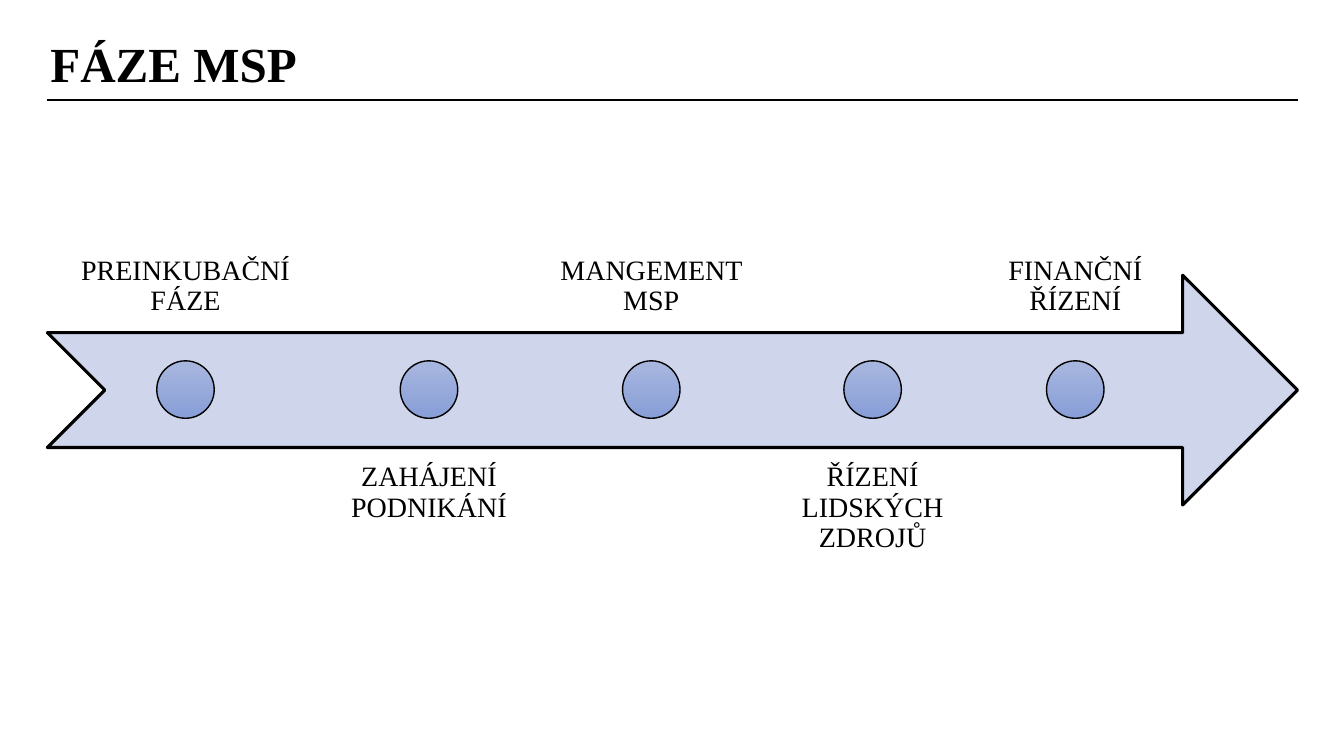
import pptx
import pptx.util
import pptx.dml.color
import pptx.enum.shapes
import pptx.enum.text
import pptx.oxml.ns
import lxml.etree

Inches = pptx.util.Inches
Pt = pptx.util.Pt
SHAPE = pptx.enum.shapes.MSO_SHAPE
ALIGN = pptx.enum.text.PP_ALIGN
ANCHOR = pptx.enum.text.MSO_ANCHOR

BLACK = "000000"
ARROW_FILL = "CFD5EA"
DOT_TOP, DOT_BOTTOM = "A8B7DF", "889ED7"
DOT_SIZE = 0.57
LABEL_HEIGHT = 2.28
PHASES = [
    ("PREINKUBAČNÍ FÁZE", 0.48, 2.72),
    ("ZAHÁJENÍ PODNIKÁNÍ", 3.3, 1.91),
    ("MANGEMENT MSP", 5.31, 2.3),
    ("ŘÍZENÍ LIDSKÝCH ZDROJŮ", 7.7, 1.91),
    ("FINANČNÍ ŘÍZENÍ", 9.71, 1.91),
]


def rgb(value):
    return pptx.dml.color.RGBColor.from_string(value)


def place(sp, left, top, width, height):
    sp.left, sp.top = Inches(left), Inches(top)
    sp.width, sp.height = Inches(width), Inches(height)


def write(tf, text, size=20, bold=False, align=ALIGN.CENTER, anchor=ANCHOR.TOP,
          spacing=0.9, inset=(0.16, 0.16)):
    tf.word_wrap = True
    tf.auto_size = pptx.enum.text.MSO_AUTO_SIZE.NONE
    tf.vertical_anchor = anchor
    tf.margin_left = tf.margin_right = Inches(inset[0])
    tf.margin_top = tf.margin_bottom = Inches(inset[1])
    p = tf.paragraphs[0]
    p.alignment = align
    p.line_spacing = spacing
    r = p.add_run()
    r.text = text
    r.font.name = "Times New Roman"
    r.font.size = Pt(size)
    r.font.bold = bold
    r.font.color.rgb = rgb(BLACK)


def add_title(s, text):
    sp = s.shapes.title
    place(sp, 0.4, 0.28, 12.47, 0.69)
    write(sp.text_frame, text, size=35, bold=True, align=ALIGN.LEFT,
          spacing=1.0, inset=(0.1, 0.05))


def add_rule(s, left, right, y):
    line = s.shapes.add_connector(
        pptx.enum.shapes.MSO_CONNECTOR.STRAIGHT,
        Inches(left), Inches(y), Inches(right), Inches(y))
    line.line.color.rgb = rgb(BLACK)
    line.line.width = Pt(1.5)
    lxml.etree.SubElement(line._element.spPr, pptx.oxml.ns.qn("a:effectLst"))


def add_outlined(s, kind, left, top, width, height, weight):
    sp = s.shapes.add_shape(kind, Inches(left), Inches(top),
                            Inches(width), Inches(height))
    sp.shadow.inherit = False
    sp.line.color.rgb = rgb(BLACK)
    sp.line.width = Pt(weight)
    return sp


def add_label(s, text, left, width, above):
    top = 1.02 if above else 4.43
    sp = s.shapes.add_textbox(Inches(left), Inches(top),
                              Inches(width), Inches(LABEL_HEIGHT))
    write(sp.text_frame, text, anchor=ANCHOR.BOTTOM if above else ANCHOR.TOP)


def add_dot(s, center):
    sp = add_outlined(s, SHAPE.OVAL, center - DOT_SIZE / 2, 3.58,
                      DOT_SIZE, DOT_SIZE, 1)
    sp.fill.gradient()
    sp.fill.gradient_angle = 270
    for stop, color in zip(sp.fill.gradient_stops, (DOT_TOP, DOT_BOTTOM)):
        stop.color.rgb = rgb(color)


def main():
    prs = pptx.Presentation()
    prs.slide_width, prs.slide_height = Inches(13.33), Inches(7.5)
    s = prs.slides.add_slide(prs.slide_layouts[5])
    add_title(s, "FÁZE MSP")
    add_rule(s, 0.47, 12.87, 0.99)
    arrow = add_outlined(s, SHAPE.NOTCHED_RIGHT_ARROW, 0.47, 2.73, 12.4, 2.28, 2.25)
    arrow.fill.solid()
    arrow.fill.fore_color.rgb = rgb(ARROW_FILL)
    for i, (text, left, width) in enumerate(PHASES):
        add_label(s, text, left, width, above=i % 2 == 0)
        add_dot(s, left + width / 2)
    prs.save("out.pptx")


if __name__ == "__main__":
    main()
